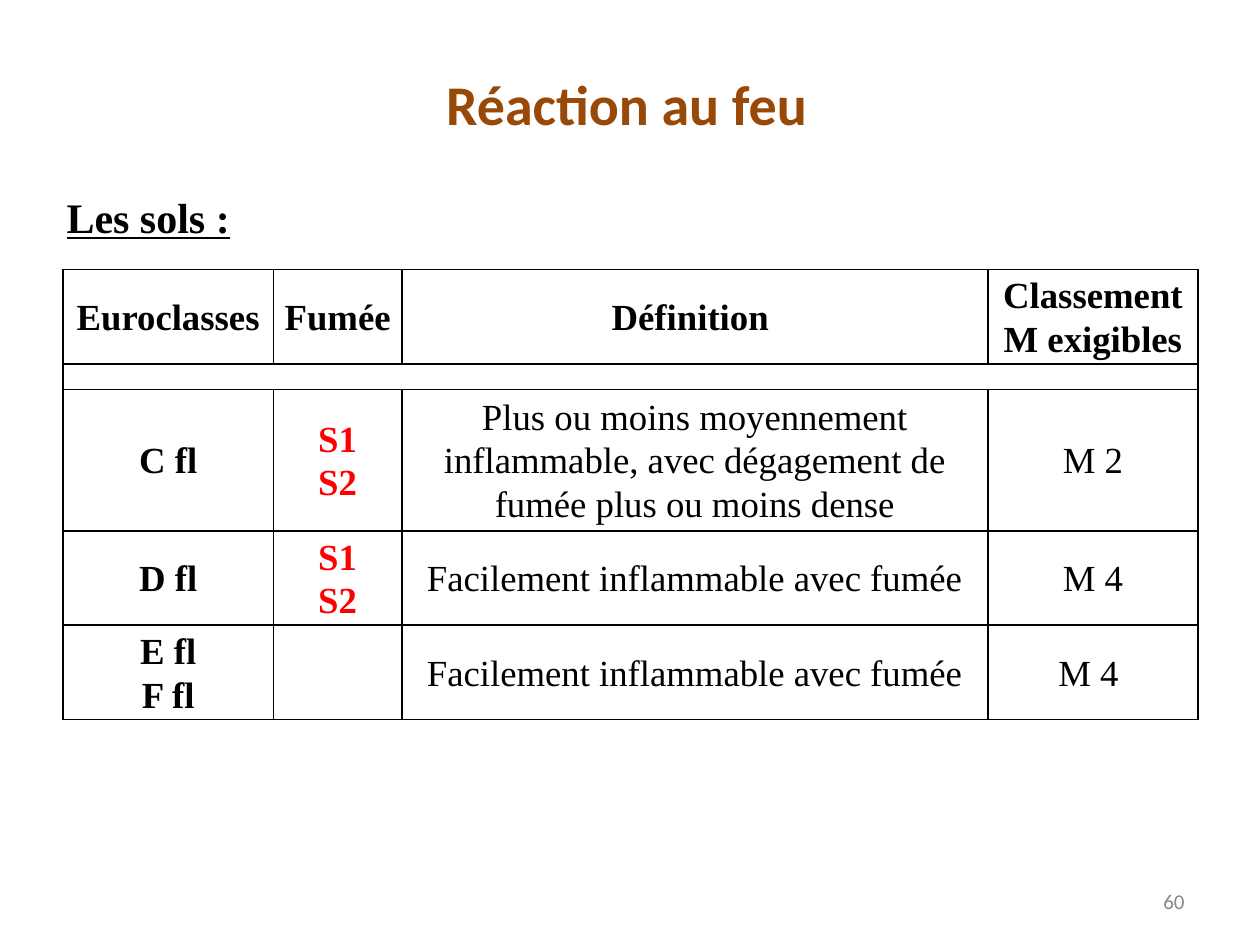
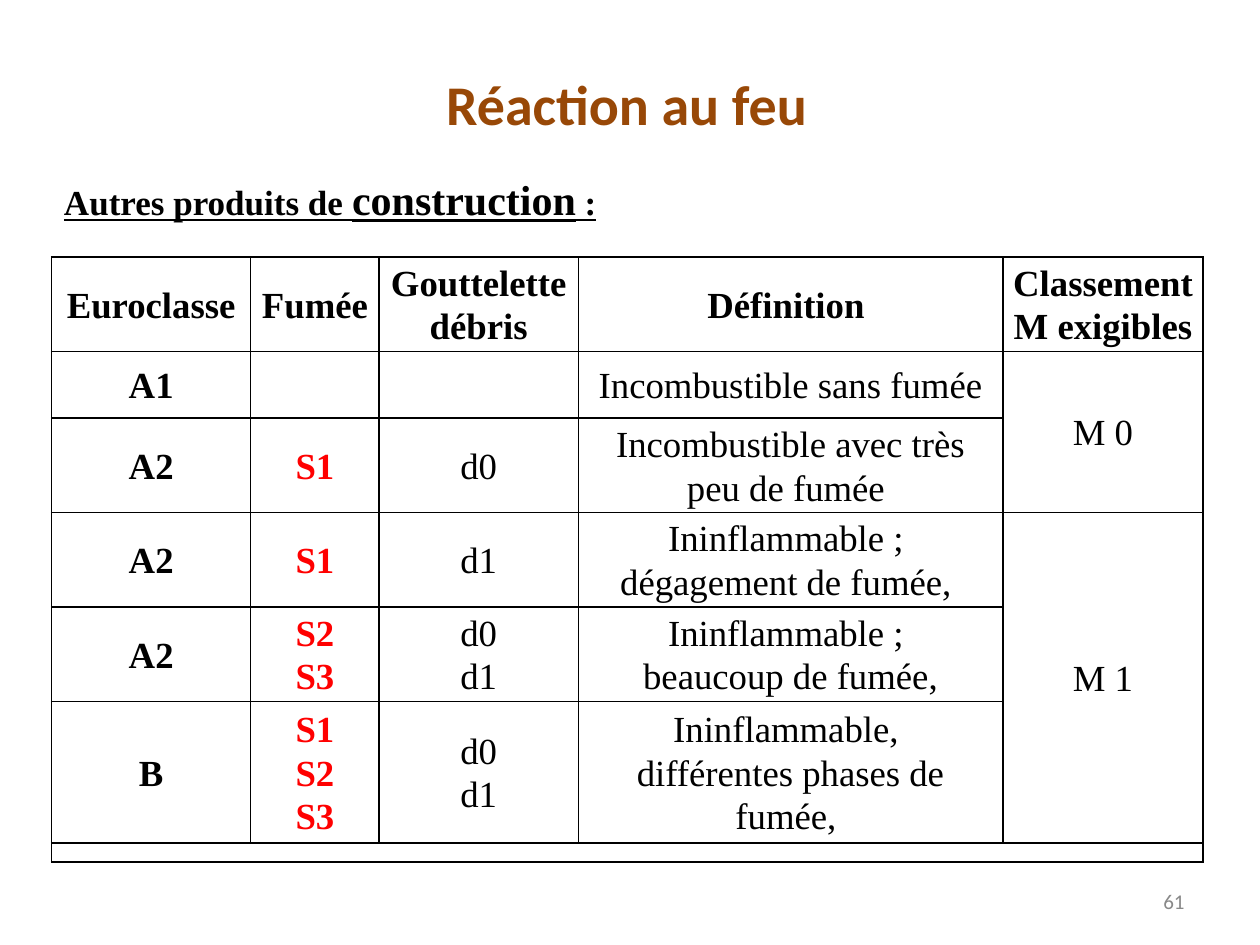
"""Build two slides of fire reaction tables: floors and other construction products."""
from lxml.etree import SubElement
from pptx import Presentation
from pptx.dml.color import RGBColor
from pptx.enum.text import MSO_ANCHOR as Anchor, MSO_AUTO_SIZE as AutoSize, PP_ALIGN as Align
from pptx.oxml.ns import qn
from pptx.util import Inches, Pt

COLORS = {"title": "984807", "text": "000000", "smoke": "FF0000", "number": "898989"}
TITLE_FONT, TABLE_FONT = "Calibri", "Times New Roman"

SLIDES = [
    {
        "number": "60",
        "heading": [("Les sols :", 24)],
        "heading_box": (0.43, 1.47, 1.51, 0.51),
        "table_box": (0.5, 2.14),
        "inset": 0.07,
        "columns": [1.67, 1.02, 4.65, 1.67],
        "heights": [0.72, 0.2, 1.1, 0.72, 0.72],
        "merges": [(1, 0, 1, 3)],
        "rows": [
            ["Euroclasses", "Fumée ", "Définition ", "Classement M exigibles"],
            ["", "", "", ""],
            ["C fl", "S1\vS2", "Plus ou moins moyennement inflammable, "
             "avec dégagement de fumée plus ou moins dense", "M 2"],
            ["D fl", "S1\vS2", "Facilement inflammable avec fumée", "M 4"],
            ["E fl\nF fl", "", "Facilement inflammable avec fumée", "M 4 "],
        ],
    },
    {
        "number": "61",
        "heading": [("Autres produits de ", 20), ("construction", 24), (" :", 20)],
        "heading_box": (0.41, 1.33, 4.46, 0.51),
        "table_box": (0.41, 2.04),
        "inset": 0.08,
        "columns": [1.58, 1.02, 1.58, 3.37, 1.59],
        "heights": [0.72, 0.53, 0.72, 0.72, 0.72, 1.1, 0.15],
        "merges": [(1, 4, 2, 4), (3, 4, 5, 4), (6, 0, 6, 4)],
        "rows": [
            ["Euroclasse", "Fumée", "Gouttelette débris", "Définition ", "Classement M exigibles"],
            ["A1", "", "", "Incombustible sans fumée", "M 0"],
            ["A2", "S1", "d0", "Incombustible avec très peu de fumée ", ""],
            ["A2", "S1", "d1", "Ininflammable ; \ndégagement de fumée, ", "M 1"],
            ["A2", "S2\nS3", "d0\nd1", "Ininflammable ; \nbeaucoup de fumée,", ""],
            ["B", "S1\vS2\nS3", "d0\nd1", "Ininflammable, \ndifférentes phases de fumée, ", ""],
            ["", "", "", "", ""],
        ],
    },
]


def format_run(run, size, font, color, bold=False, underline=None):
    run.font.size = Pt(size)
    run.font.name = font
    run.font.color.rgb = RGBColor.from_string(COLORS[color])
    run.font.bold = bold
    run.font.underline = underline


def add_borders(cell):
    properties = cell._tc.get_or_add_tcPr()
    for side in ("a:lnL", "a:lnR", "a:lnT", "a:lnB"):
        line = SubElement(properties, qn(side), w=str(Pt(1)))
        fill = SubElement(line, qn("a:solidFill"))
        SubElement(fill, qn("a:srgbClr"), val=COLORS["text"])


presentation = Presentation()
presentation.slide_width, presentation.slide_height = Inches(10), Inches(7.5)

for content in SLIDES:
    slide = presentation.slides.add_slide(presentation.slide_layouts[5])

    title = slide.shapes.title
    title.left, title.top = Inches(0.27), Inches(0.3)
    title.width, title.height = Inches(9.41), Inches(1.03)
    title.text_frame.text = "Réaction au feu"
    title.text_frame.vertical_anchor = Anchor.MIDDLE
    title.text_frame.paragraphs[0].alignment = Align.CENTER
    format_run(title.text_frame.paragraphs[0].runs[0], 32, TITLE_FONT, "title", bold=True)

    number = slide.shapes.add_textbox(Inches(7.17), Inches(6.95), Inches(2.33), Inches(0.4))
    number.text_frame.text = content["number"]
    number.text_frame.word_wrap = True
    number.text_frame.vertical_anchor = Anchor.MIDDLE
    number.text_frame.paragraphs[0].alignment = Align.RIGHT
    format_run(number.text_frame.paragraphs[0].runs[0], 12, TITLE_FONT, "number")

    heading = slide.shapes.add_textbox(*map(Inches, content["heading_box"]))
    heading.text_frame.word_wrap = False
    heading.text_frame.auto_size = AutoSize.SHAPE_TO_FIT_TEXT
    for text, size in content["heading"]:
        run = heading.text_frame.paragraphs[0].add_run()
        run.text = text
        format_run(run, size, TABLE_FONT, "text", bold=True, underline=True)

    rows, widths, heights = content["rows"], content["columns"], content["heights"]
    left, top = content["table_box"]
    table = slide.shapes.add_table(len(rows), len(widths), Inches(left), Inches(top),
                                   Inches(sum(widths)), Inches(sum(heights))).table
    table.first_row = table.horz_banding = False
    for column, width in zip(table.columns, widths):
        column.width = Inches(width)
    for row, height in zip(table.rows, heights):
        row.height = Inches(height)
    for first_row, first_column, last_row, last_column in content["merges"]:
        table.cell(first_row, first_column).merge(table.cell(last_row, last_column))

    for row_index, row in enumerate(rows):
        for column_index, text in enumerate(row):
            cell = table.cell(row_index, column_index)
            cell.text_frame.text = text
            cell.vertical_anchor = Anchor.MIDDLE
            cell.margin_left = cell.margin_right = Inches(content["inset"])
            cell.margin_top = cell.margin_bottom = 0
            add_borders(cell)
            cell.fill.background()
            is_header = row_index == 0
            color = "smoke" if column_index == 1 and not is_header else "text"
            for paragraph in cell.text_frame.paragraphs:
                paragraph.alignment = Align.CENTER
                paragraph.line_spacing = 1.07
                for run in paragraph.runs:
                    format_run(run, 21, TABLE_FONT, color, bold=is_header or column_index < 2)
                if not text:
                    SubElement(paragraph._p, qn("a:endParaRPr"), sz="600")

presentation.save("out.pptx")
